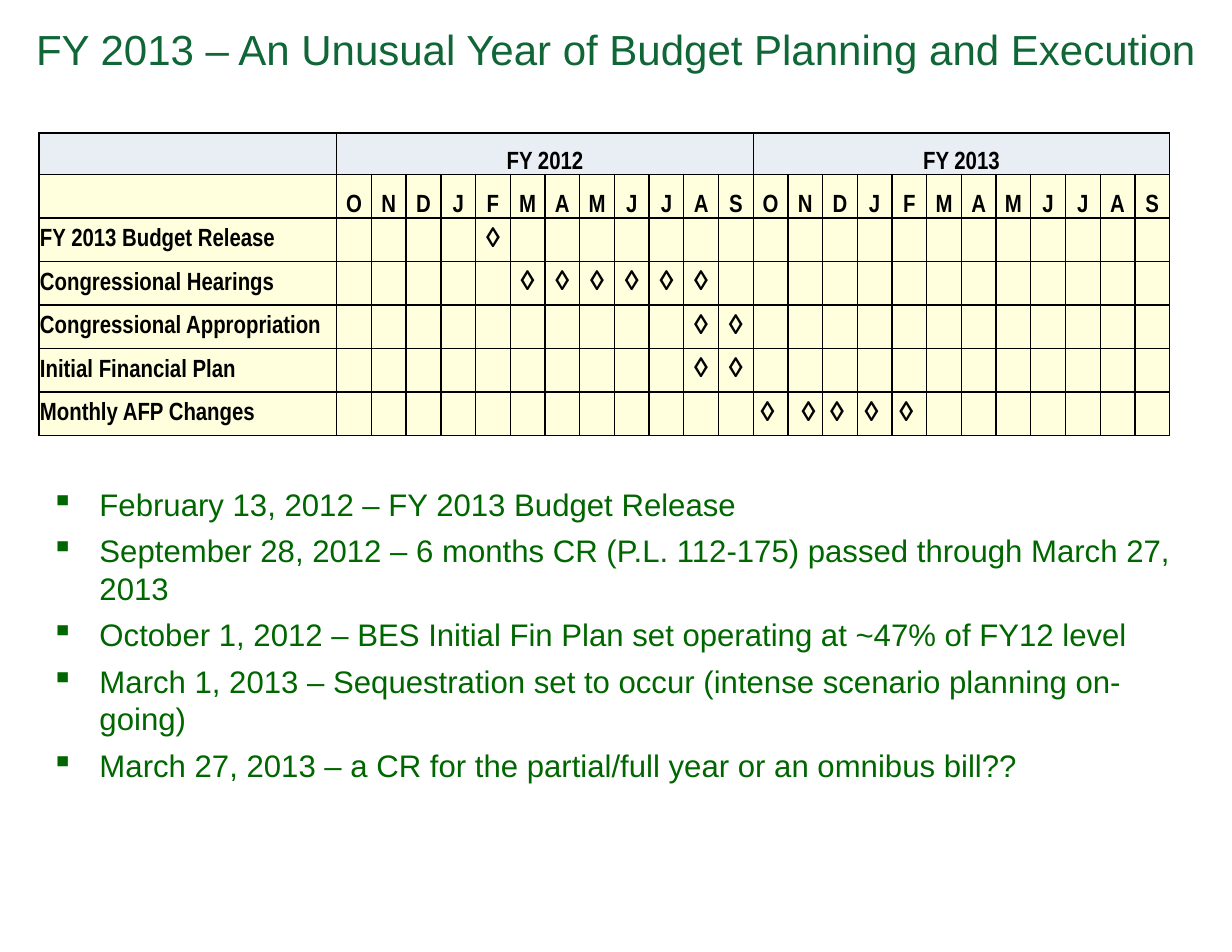
from lxml import etree
from pptx import Presentation
from pptx.dml.color import RGBColor
from pptx.enum.text import MSO_ANCHOR, PP_ALIGN
from pptx.oxml.ns import qn
from pptx.util import Pt

CENTER, LEFT = PP_ALIGN.CENTER, PP_ALIGN.LEFT
MIDDLE, BOTTOM = MSO_ANCHOR.MIDDLE, MSO_ANCHOR.BOTTOM

MONTHS = "ONDJFMAMJJAS"
# Each activity with its first and last marked month, counted from October 2011
ACTIVITIES = [
    ("FY 2013 Budget Release", 5, 5),
    ("Congressional Hearings", 6, 11),
    ("Congressional Appropriation", 11, 12),
    ("Initial Financial Plan", 11, 12),
    ("Monthly AFP Changes", 13, 17),
]
EVENTS = [
    "February 13, 2012 – FY 2013 Budget Release",
    "September 28, 2012 – 6 months CR (P.L. 112-175) passed through March 27, 2013",
    "October 1, 2012 – BES Initial Fin Plan set operating at ~47% of FY12 level",
    "March 1, 2013 – Sequestration set to occur (intense scenario planning on-going)",
    "March 27, 2013 – a CR for the partial/full year or an omnibus bill??",
]


def color(value):
    return RGBColor.from_string(value)


def write(para, text, size, font_name, value, bold=False, align=LEFT):
    para.text = text
    para.alignment = align
    for span in para.runs:
        span.font.size = Pt(size)
        span.font.name = font_name
        span.font.bold = bold
        span.font.color.rgb = color(value)


deck = Presentation()
deck.slide_width, deck.slide_height = Pt(792), Pt(612)
page = deck.slides.add_slide(deck.slide_layouts[6])

# Title
title = page.shapes.add_textbox(Pt(0), Pt(-19.5), Pt(792), Pt(102)).text_frame
title.word_wrap = True
title.vertical_anchor = MIDDLE
write(title.paragraphs[0], "FY 2013 – An Unusual Year of Budget Planning and Execution",
      27, "Arial", "106636", align=CENTER)

# Schedule: one label column and 24 months
row_count, column_count = 2 + len(ACTIVITIES), 1 + 2 * len(MONTHS)
schedule = page.shapes.add_table(row_count, column_count, Pt(25), Pt(85.5),
                                 Pt(727.5), Pt(194.6)).table
for index, column in enumerate(schedule.columns):
    column.width = Pt(22.33) if index else Pt(191.5)
for index, row in enumerate(schedule.rows):
    row.height = Pt(28) if index else Pt(26.6)

texts = {(0, 1): "FY 2012", (0, 13): "FY 2013"}
for column, month in enumerate(MONTHS * 2, start=1):
    texts[1, column] = month
for row, (activity, first, last) in enumerate(ACTIVITIES, start=2):
    texts[row, 0] = activity
    for column in range(first, last + 1):
        texts[row, column] = "◊"

for row in range(row_count):
    for column in range(column_count):
        cell = schedule.cell(row, column)
        cell.margin_left = cell.margin_right = cell.margin_top = Pt(0.72)
        cell.margin_bottom = Pt(0)
        cell.vertical_anchor = BOTTOM if row < 2 else MIDDLE
        text = texts.get((row, column), "")
        align = CENTER if column else LEFT
        if text == "◊" and row == row_count - 1:
            cell.margin_left = Pt(4.8)
            align = CENTER if column == 14 else LEFT
        write(cell.text_frame.paragraphs[0], text, 18 if text == "◊" else 16,
              "Arial Narrow", "000000", bold=True, align=align)
        properties = cell._tc.get_or_add_tcPr()
        for side in ("a:lnL", "a:lnR", "a:lnT", "a:lnB"):
            line = etree.SubElement(properties, qn(side), w=str(Pt(1)))
            paint = etree.SubElement(line, qn("a:solidFill"))
            etree.SubElement(paint, qn("a:srgbClr"), val="000000")
        cell.fill.solid()
        cell.fill.fore_color.rgb = color("FFFFDD" if row else "E9EDF4")

for start in (1, 13):
    schedule.cell(0, start).merge(schedule.cell(0, start + 11))

# Key dates
dates = page.shapes.add_textbox(Pt(25.2), Pt(308.2), Pt(737.3), Pt(200.9)).text_frame
dates.word_wrap = True
for index, event in enumerate(EVENTS):
    para = dates.add_paragraph() if index else dates.paragraphs[0]
    write(para, event, 20, "Arial", "006600")
    if index:
        para.space_before = Pt(6)
    properties = para._p.get_or_add_pPr()
    properties.set("marL", str(Pt(31.7)))
    properties.set("indent", str(Pt(-31)))
    etree.SubElement(properties, qn("a:buChar"), char="▪")

deck.save("out.pptx")
